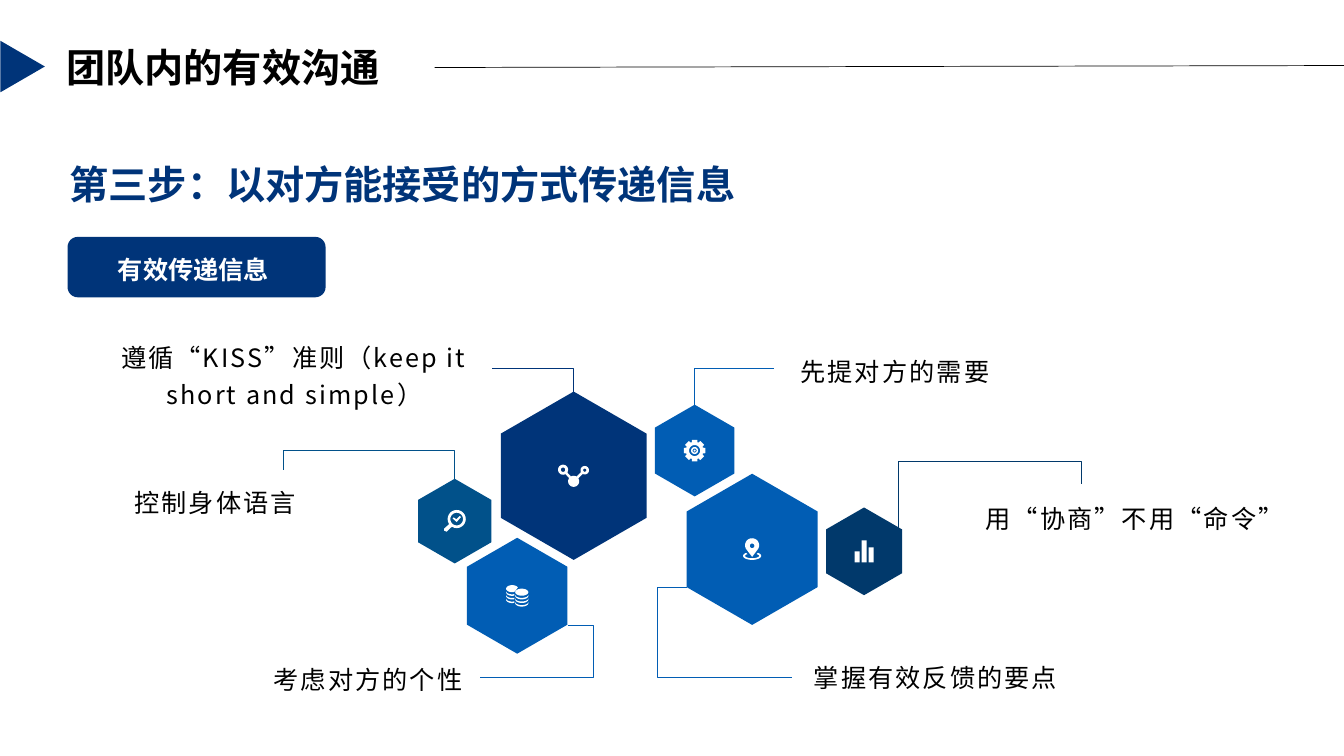
import math

import pptx
import pptx.dml.color
import pptx.enum.shapes
import pptx.enum.text
import pptx.oxml
import pptx.oxml.ns
import pptx.util
from pptx.util import Inches

COLORS = {"navy": "003479", "blue": "015DB4", "deep": "01396B", "teal": "01518A",
          "white": "FFFFFF", "black": "000000"}
FONT = "Noto Sans CJK SC"
HEADER_FONT = "Noto Sans CJK JP"
ALIGN = pptx.enum.text.PP_ALIGN
ANCHOR = pptx.enum.text.MSO_ANCHOR
SHAPE = pptx.enum.shapes.MSO_SHAPE

HEADER = "团队内的有效沟通"
STEP = "第三步：以对方能接受的方式传递信息"
TOPIC = "有效传递信息"

# text, box, alignment, anchor, top inset
TIPS = [
    ("掌握有效反馈的要点", (7.4, 6.26, 3.76, 0.86), ALIGN.CENTER, ANCHOR.MIDDLE, 0.05),
    ("考虑对方的个性 ", (1.81, 6.28, 3.76, 0.86), ALIGN.CENTER, ANCHOR.MIDDLE, 0.05),
    ("用“协商”不用“命令”", (9.59, 4.93, 3.33, 0.86), ALIGN.CENTER, ANCHOR.TOP, 0),
    ("控制身体语言", (0.47, 4.77, 3.33, 0.86), ALIGN.CENTER, ANCHOR.TOP, 0),
    ("先提对方的需要", (7.84, 3.23, 3.76, 0.86), ALIGN.LEFT, ANCHOR.MIDDLE, 0.05),
    ("遵循“KISS”准则（keep it short and simple）", (1.04, 3.27, 3.76, 0.86),
     ALIGN.CENTER, ANCHOR.MIDDLE, 0.05),
]

# centre x, centre y, height, colour, icon, leader line
HEXAGONS = [
    (5.69, 4.72, 1.67, "navy", "nodes", [(5.69, 3.89), (5.69, 3.65), (4.88, 3.65)]),
    (7.46, 5.45, 1.5, "blue", "pin", [(6.81, 5.83), (6.52, 5.83), (6.52, 6.72), (7.86, 6.72)]),
    (8.57, 5.47, 0.87, "deep", "bars", [(8.91, 5.24), (8.91, 4.58), (10.73, 4.58), (10.73, 4.8)]),
    (4.51, 5.17, 0.84, "teal", "magnifier", [(4.51, 4.75), (4.51, 4.47), (2.81, 4.47), (2.81, 4.66)]),
    (6.89, 4.47, 0.91, "blue", "gear", [(6.89, 4.02), (6.89, 3.65), (7.68, 3.65)]),
    (5.13, 5.91, 1.15, "blue", "coins", [(5.63, 6.2), (5.89, 6.2), (5.89, 6.72), (4.76, 6.72)]),
]
ICON_UNIT = 0.01


def arc(x, y, rx, ry, start=0, end=360, steps=24):
    angles = [math.radians(start + (end - start) * i / steps) for i in range(steps + 1)]
    return [(x + rx * math.cos(a), y + ry * math.sin(a)) for a in angles]


def disc(x, y, radius):
    return arc(x, y, radius, radius)


def bar(left, top, width=5, bottom=11):
    return [(left, top), (left + width, top), (left + width, bottom), (left, bottom)]


def coin_edge(x, y, rx, start):
    return arc(x, y, rx, 3.5, start, 180) + arc(x, y - 1, rx, 3, 180, start)


gear_rim = [(r * math.cos(math.radians(45 * tooth + turn)), r * math.sin(math.radians(45 * tooth + turn)))
            for tooth in range(8) for turn, r in ((-19, 8.7), (-14, 11), (14, 11), (19, 8.7))]

ICONS = {
    "nodes": [disc(-10.5, -6, 5), disc(-10.5, -6, 2.2), disc(11, -5.5, 4.2), disc(11, -5.5, 1.6),
              disc(0, 5.5, 5.5),
              [(-6.2, -3.1), (-2.8, 0.6), (-4.6, 2.2), (-8, -1.5)],
              [(7.2, -3.4), (8.9, -1.7), (4.7, 2.4), (3, 0.7)]],
    "pin": [arc(0, -4, 7, 7, 150, 390) + [(0, 7.5)], disc(0, -3.5, 2.3),
            arc(0, 6.5, 9, 4, -50, 230) + arc(0, 6.5, 7, 2.3, 230, -50)],
    "bars": [bar(-9.5, 0), bar(-2.5, -11), bar(4.5, -4)],
    "magnifier": [disc(2, -2, 9), disc(2, -2, 6.3),
                  [(-2, -2.5), (-1, -3.6), (1.8, -1.8), (5, -5), (6.3, -4), (2, 1)],
                  [(-5.2, 2.8), (-2.8, 5.6), (-8, 10.5), (-10.5, 9.5), (-10.5, 7.5)]],
    "gear": [gear_rim] + [disc(0, 0, r) for r in (5.5, 3.5, 2, 1)],
    "coins": [arc(-5, -7, 6, 3.5, 70, 340), arc(4.5, -3.5, 6.5, 3.5)]
             + [coin_edge(-5, -7 + 3.6 * i, 6, 70) for i in (1, 2, 3)]
             + [coin_edge(4.5, -3.5 + 3.6 * i, 6.5, 0) for i in (1, 2, 3)],
}


def rgb(color):
    return pptx.dml.color.RGBColor.from_string(COLORS[color])


def paint(shape, fill=None, line=None):
    shape.shadow.inherit = False
    if fill:
        shape.fill.solid()
        shape.fill.fore_color.rgb = rgb(fill)
    else:
        shape.fill.background()
    if line:
        shape.line.color.rgb = rgb(line)
        shape.line.width = pptx.util.Pt(0.5)
    else:
        shape.line.fill.background()


def write(shape, text, size, color, bold=False, font=FONT, align=ALIGN.LEFT,
          anchor=ANCHOR.TOP, line_spacing=1.0, tracking=0):
    frame = shape.text_frame
    frame.word_wrap = True
    frame.vertical_anchor = anchor
    frame.text = text
    paragraph = frame.paragraphs[0]
    paragraph.alignment = align
    paragraph.line_spacing = line_spacing
    paragraph.font.name = font
    paragraph.font.size = pptx.util.Pt(size)
    paragraph.font.bold = bold
    paragraph.font.color.rgb = rgb(color)
    defaults = paragraph._p.pPr.find(pptx.oxml.ns.qn("a:defRPr"))
    defaults.set("spc", str(int(tracking * 100)))
    east_asian = pptx.oxml.parse_xml(f'<a:ea {pptx.oxml.ns.nsdecls("a")} typeface="{font}"/>')
    defaults.find(pptx.oxml.ns.qn("a:latin")).addnext(east_asian)


def add_outline(shapes, contours, closed=True):
    contours = [[(Inches(x), Inches(y)) for x, y in contour] for contour in contours]
    builder = shapes.build_freeform(*contours[0][0])
    for i, contour in enumerate(contours):
        if i:
            builder.move_to(*contour[0])
        builder.add_line_segments(contour[1:], close=closed)
    return builder.convert_to_shape()


def hexagon(x, y, height):
    half_width = height * math.sqrt(3) / 4
    return [(x, y - height / 2), (x + half_width, y - height / 4), (x + half_width, y + height / 4),
            (x, y + height / 2), (x - half_width, y + height / 4), (x - half_width, y - height / 4)]


def main():
    deck = pptx.Presentation()
    deck.slide_width, deck.slide_height = Inches(13.33), Inches(7.5)
    slide = deck.slides.add_slide(deck.slide_layouts[5])
    shapes = slide.shapes

    step = shapes.title
    step.left, step.top, step.width, step.height = map(Inches, (0.59, 1.39, 7.31, 0.92))
    write(step, STEP, 28, "navy", bold=True, anchor=ANCHOR.MIDDLE, line_spacing=0.9)

    header = shapes.add_textbox(*map(Inches, (0.56, 0.38, 3.75, 0.57)))
    write(header, HEADER, 28, "black", bold=True, font=HEADER_FONT)
    marker = shapes.add_shape(SHAPE.ISOSCELES_TRIANGLE, *map(Inches, (-0.03, 0.44, 0.51, 0.44)))
    marker.rotation = 90
    paint(marker, "navy")
    rule = shapes.add_connector(pptx.enum.shapes.MSO_CONNECTOR.STRAIGHT,
                                *map(Inches, (4.31, 0.67, 13.33, 0.65)))
    rule.line.color.rgb = rgb("black")
    rule.line.width = pptx.util.Pt(0.5)
    rule._element.spPr.append(pptx.oxml.parse_xml(f'<a:effectLst {pptx.oxml.ns.nsdecls("a")}/>'))

    topic = shapes.add_shape(SHAPE.ROUNDED_RECTANGLE, *map(Inches, (0.67, 2.35, 2.56, 0.6)))
    topic.adjustments[0] = 0.17
    paint(topic, "navy")
    write(topic, TOPIC, 18, "white", bold=True, anchor=ANCHOR.MIDDLE)
    topic.text_frame.margin_left = Inches(0.47)
    topic.text_frame.margin_top = Inches(0.09)

    for text, box, align, anchor, inset in TIPS:
        tip = shapes.add_textbox(*map(Inches, box))
        write(tip, text, 18, "black", align=align, anchor=anchor, line_spacing=1.2, tracking=1.5)
        tip.text_frame.margin_top = Inches(inset)

    for x, y, height, color, icon, leader in HEXAGONS:
        paint(add_outline(shapes, [leader], closed=False), line=color)
        paint(add_outline(shapes, [hexagon(x, y, height)]), color)
        contours = [[(x + u * ICON_UNIT, y + v * ICON_UNIT) for u, v in contour]
                    for contour in ICONS[icon]]
        paint(add_outline(shapes, contours), "white")

    deck.save("out.pptx")


if __name__ == "__main__":
    main()
